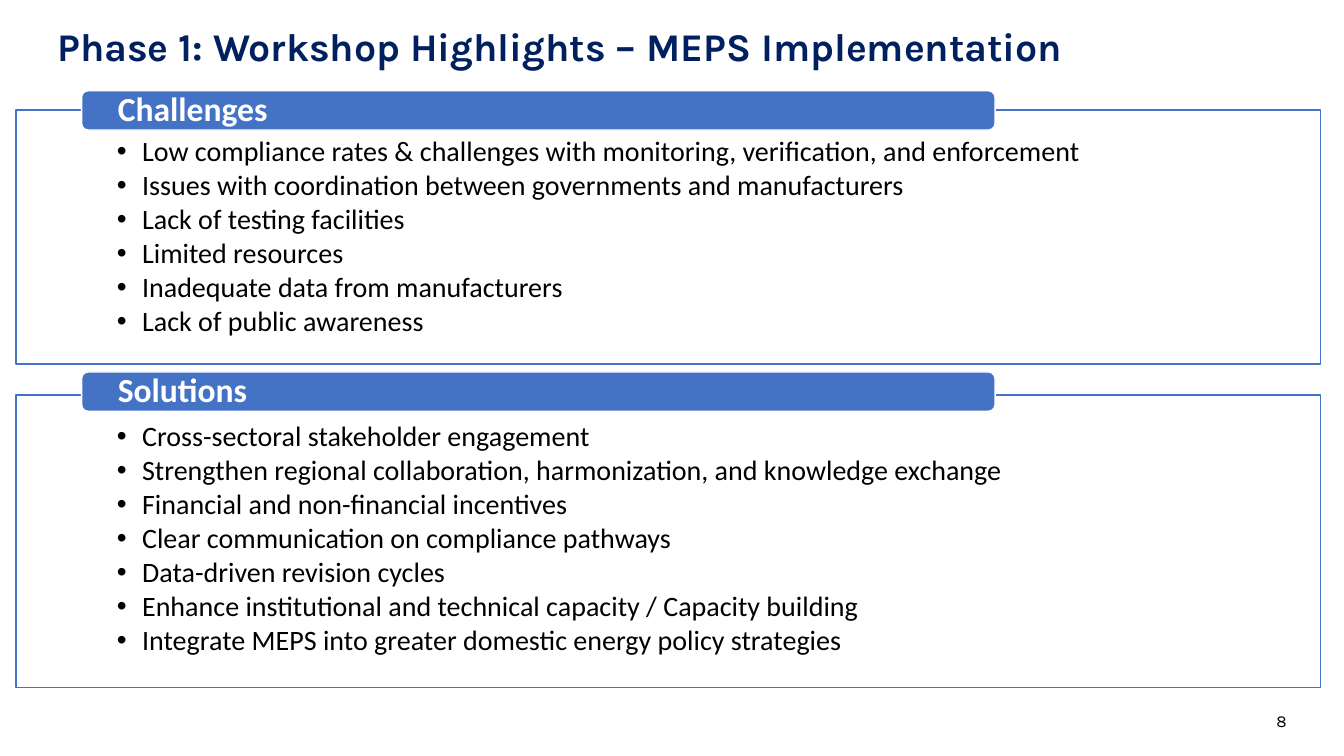
import pptx
import pptx.dml.color
import pptx.enum.shapes
import pptx.enum.text
import pptx.oxml
import pptx.oxml.ns
import pptx.util

PX = 9144
COLORS = {"navy": "002060", "blue": "4472C4", "white": "FFFFFF", "black": "000000"}
SHAPES = pptx.enum.shapes.MSO_SHAPE
ANCHORS = pptx.enum.text.MSO_ANCHOR
ALIGNMENTS = pptx.enum.text.PP_ALIGN
CHALLENGES = [
    "Low compliance rates & challenges with monitoring, verification, and enforcement",
    "Issues with coordination between governments and manufacturers",
    "Lack of testing facilities",
    "Limited resources",
    "Inadequate data from manufacturers",
    "Lack of public awareness",
]
SOLUTIONS = [
    "Cross-sectoral stakeholder engagement",
    "Strengthen regional collaboration, harmonization, and knowledge exchange",
    "Financial and non-financial incentives",
    "Clear communication on compliance pathways",
    "Data-driven revision cycles",
    "Enhance institutional and technical capacity / Capacity building",
    "Integrate MEPS into greater domestic energy policy strategies",
]


def color(name):
    """Return the named colour."""
    return pptx.dml.color.RGBColor.from_string(COLORS[name])


def box(*lengths):
    """Turn px lengths into EMU."""
    return [pptx.util.Emu(length * PX) for length in lengths]


def set_frame(frame, anchor, margins):
    """Set wrapping, anchor and margins (left, top, right, bottom) of a text frame."""
    frame.word_wrap = True
    frame.vertical_anchor = anchor
    (frame.margin_left, frame.margin_top,
     frame.margin_right, frame.margin_bottom) = box(*margins)


def style(paragraph, text, font_name, size, color_name, bold=False,
          alignment=ALIGNMENTS.LEFT, line_spacing=0.9):
    """Write and format one paragraph."""
    paragraph.text = text
    paragraph.alignment = alignment
    paragraph.line_spacing = line_spacing
    paragraph.font.name = font_name
    paragraph.font.size = pptx.util.Pt(size)
    paragraph.font.bold = bold
    paragraph.font.color.rgb = color(color_name)


def add_bullet(paragraph):
    """Give a paragraph a hanging round bullet."""
    properties = paragraph._p.get_or_add_pPr()
    properties.set("marL", str(25 * PX))
    properties.set("indent", str(-25 * PX))
    namespace = pptx.oxml.ns.nsdecls("a")
    properties.append(pptx.oxml.parse_xml(f'<a:buFont {namespace} typeface="Arial"/>'))
    properties.append(pptx.oxml.parse_xml(f'<a:buChar {namespace} char="•"/>'))


def add_text(slide, lengths, anchor, text, *font, **options):
    """Add a one-line text box."""
    frame = slide.shapes.add_textbox(*box(*lengths)).text_frame
    set_frame(frame, anchor, (10, 5, 10, 5))
    style(frame.paragraphs[0], text, *font, **options)


def add_block(slide, kind, lengths, fill, line):
    """Add a filled, outlined shape."""
    shape = slide.shapes.add_shape(kind, *box(*lengths))
    shape.shadow.inherit = False
    shape.fill.solid()
    shape.fill.fore_color.rgb = color(fill)
    shape.line.color.rgb = color(line)
    shape.line.width = pptx.util.Pt(1)
    return shape


def add_section(slide, heading, items, heading_top, panel_top, panel_height):
    """Add a bulleted panel with a heading bar over its top edge."""
    panel = add_block(slide, SHAPES.RECTANGLE, (16, panel_top, 1294, panel_height),
                      "white", "blue")
    frame = panel.text_frame
    set_frame(frame, ANCHORS.TOP, (100, 27, 100, 16))
    for index, item in enumerate(items):
        paragraph = frame.add_paragraph() if index else frame.paragraphs[0]
        add_bullet(paragraph)
        style(paragraph, item, "Calibri", 20, "black")
        paragraph.level = 1
        paragraph.space_after = pptx.util.Pt(2.7)

    bar = add_block(slide, SHAPES.ROUNDED_RECTANGLE, (81, heading_top, 906, 39),
                    "blue", "white")
    set_frame(bar.text_frame, ANCHORS.MIDDLE, (34, 0, 34, 0))
    style(bar.text_frame.paragraphs[0], heading, "Calibri", 24, "white", bold=True)


def main():
    """Build and save the slide."""
    presentation = pptx.Presentation()
    presentation.slide_width, presentation.slide_height = box(1333, 750)
    slide = presentation.slides.add_slide(presentation.slide_layouts[6])
    add_text(slide, (47, 15, 1239, 59), ANCHORS.BOTTOM,
             "Phase 1: Workshop Highlights – MEPS Implementation",
             "Karla", 28, "navy", bold=True)
    add_section(slide, "Challenges", CHALLENGES, 90, 109, 252)
    add_section(slide, "Solutions", SOLUTIONS, 369, 392, 290)
    add_text(slide, (986, 695, 300, 40), ANCHORS.MIDDLE, "8", "Karla", 12, "black",
             alignment=ALIGNMENTS.RIGHT, line_spacing=1.0)
    presentation.save("out.pptx")


if __name__ == "__main__":
    main()
